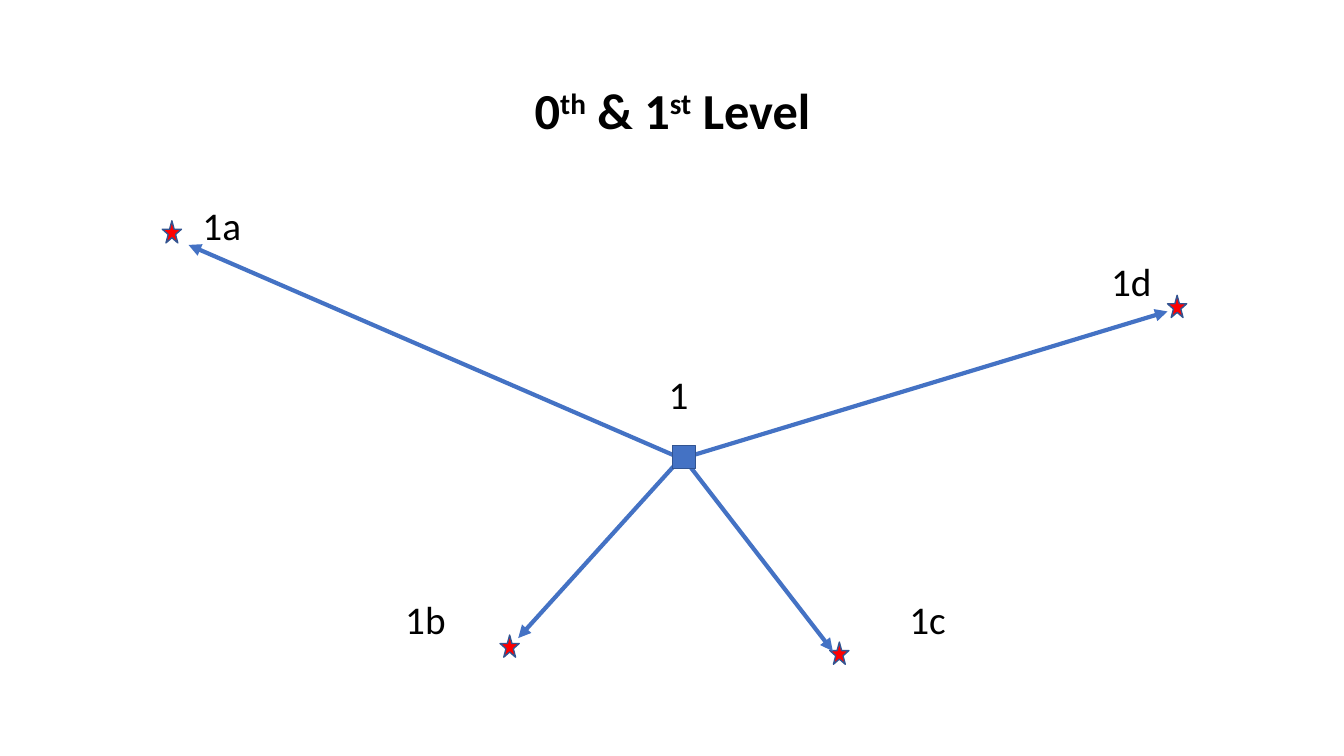
import pptx
import pptx.util
import pptx.dml.color
import pptx.enum.shapes
import pptx.enum.text
import pptx.oxml
import pptx.oxml.ns

EMU_PER_PX = 9144
SHAPES = pptx.enum.shapes.MSO_SHAPE


def px(length):
    return pptx.util.Emu(length * EMU_PER_PX)


def color(hex_value):
    return pptx.dml.color.RGBColor.from_string(hex_value)


class LevelSlide:
    font = "Calibri"
    ink = "000000"
    blue = "4472C4"
    outline = "325491"
    red = "FF0000"

    def __init__(self, deck):
        self.slide = deck.slides.add_slide(deck.slide_layouts[6])

    def text(self, left, top, width, height, runs, size, bold=False):
        box = self.slide.shapes.add_textbox(px(left), px(top), px(width), px(height))
        frame = box.text_frame
        frame.word_wrap = True
        frame.margin_left = frame.margin_right = 0
        frame.margin_top = frame.margin_bottom = 0
        frame.vertical_anchor = pptx.enum.text.MSO_ANCHOR.MIDDLE
        paragraph = frame.paragraphs[0]
        paragraph.alignment = pptx.enum.text.PP_ALIGN.CENTER
        paragraph.line_spacing = 0.9
        paragraph.font.name = self.font
        paragraph.font.size = pptx.util.Pt(size)
        paragraph.font.bold = bold
        paragraph.font.color.rgb = color(self.ink)
        for wording, raised in runs:
            run = paragraph.add_run()
            run.text = wording
            if raised:
                run.font._element.set("baseline", "30000")

    def label(self, center_x, center_y, wording):
        self.text(center_x - 40, center_y - 25, 80, 50, [(wording, False)], 28)

    def node(self, kind, left, top, width, height, fill):
        node = self.slide.shapes.add_shape(kind, px(left), px(top), px(width), px(height))
        node.shadow.inherit = False
        node.fill.solid()
        node.fill.fore_color.rgb = color(fill)
        node.line.color.rgb = color(self.outline)
        node.line.width = pptx.util.Pt(1)

    def star(self, left, top):
        self.node(SHAPES.STAR_5_POINT, left, top, 19, 22, self.red)

    def arrow(self, start, end):
        arrow = self.slide.shapes.add_connector(
            pptx.enum.shapes.MSO_CONNECTOR.STRAIGHT, *map(px, start + end))
        arrow.line.color.rgb = color(self.blue)
        arrow.line.width = pptx.util.Pt(3)
        head = pptx.oxml.parse_xml(
            f'<a:tailEnd {pptx.oxml.ns.nsdecls("a")} type="triangle"/>')
        arrow.line._get_or_add_ln().append(head)
        arrow._element.spPr.append(
            pptx.oxml.parse_xml(f'<a:effectLst {pptx.oxml.ns.nsdecls("a")}/>'))


def main():
    deck = pptx.Presentation()
    deck.slide_width, deck.slide_height = px(1333), px(750)
    level = LevelSlide(deck)

    heading = [("0", False), ("th", True), (" & 1", False), ("st", True), (" Level", False)]
    level.text(92, 40, 1150, 145, heading, 36, bold=True)

    branches = [
        ("1a", (220, 226), (161, 219), (676, 455), (187, 243)),
        ("1b", (422, 617), (496, 630), (675, 455), (514, 633)),
        ("1c", (920, 617), (823, 637), (676, 452), (826, 646)),
        ("1d", (1122, 282), (1158, 293), (676, 455), (1158, 309)),
    ]
    for name, label_center, star_corner, start, end in branches:
        level.label(*label_center, name)
        level.star(*star_corner)
        level.arrow(start, end)

    level.label(673, 394, "1")
    level.node(SHAPES.RECTANGLE, 667, 442, 23, 23, level.blue)
    deck.save("out.pptx")


if __name__ == "__main__":
    main()
